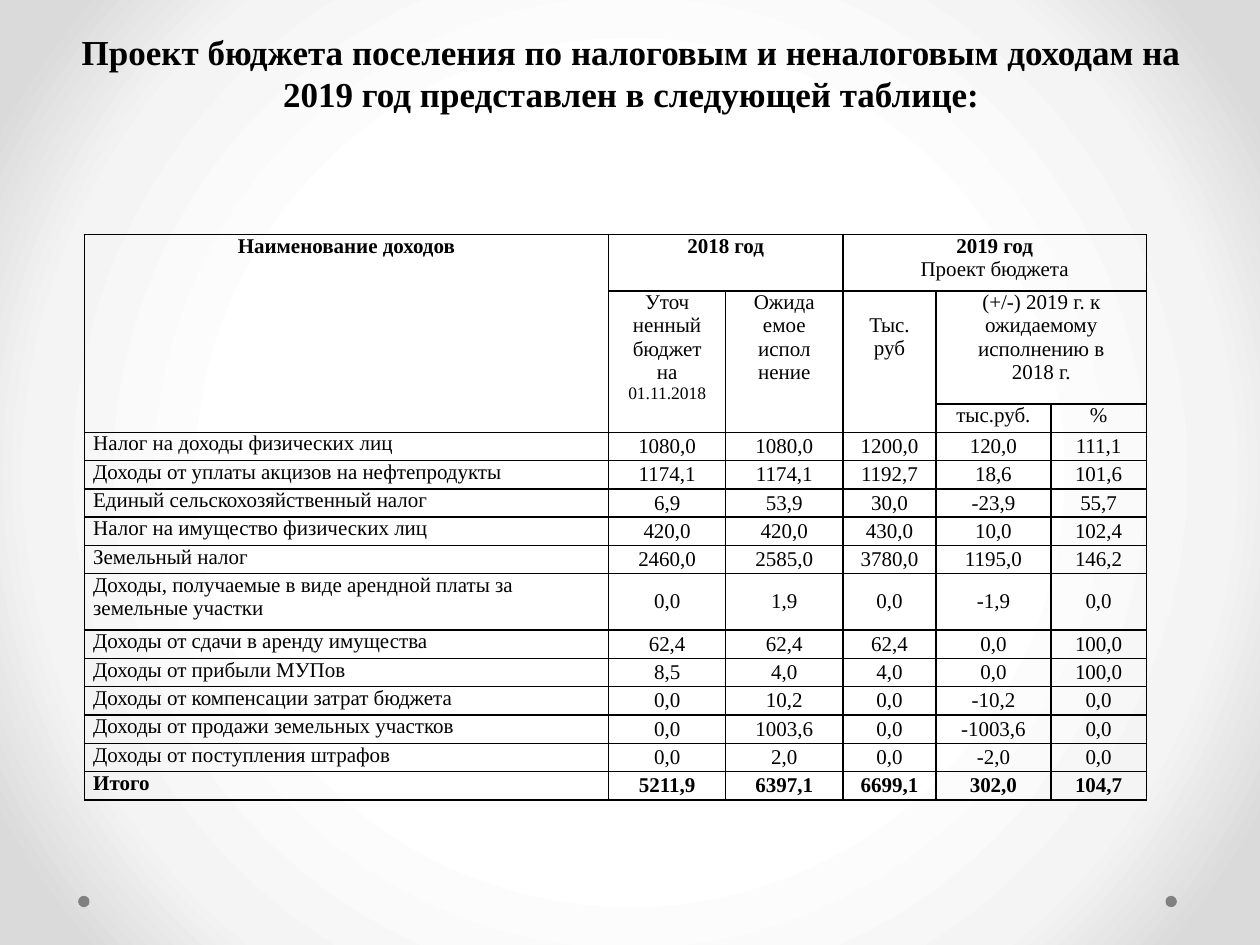
from dataclasses import dataclass
from pptx import Presentation
from pptx.dml.color import RGBColor
from pptx.enum.shapes import MSO_SHAPE as Shape
from pptx.enum.text import MSO_ANCHOR as Anchor, PP_ALIGN as Align
from pptx.oxml import parse_xml
from pptx.oxml.ns import nsdecls
from pptx.util import Inches, Pt


@dataclass(frozen=True)
class Theme:
    font: str = "Times New Roman"
    ink: str = "000000"
    dot: str = "808080"
    glow: tuple = ((50, "FFFFFF"), (76, "F4F4F4"), (92, "DADADA"))
    title_size: int = 20
    body_size: int = 12
    date_size: int = 10
    border: int = 1


THEME = Theme()
WIDTH, HEIGHT = Inches(10), Inches(7.5)
TITLE = "Проект бюджета поселения по налоговым и неналоговым доходам на 2019 год представлен в следующей таблице:"
BOLD = {"bold": True}
PLAIN = {"bold": False}
DATE = {"bold": False, "size": Pt(THEME.date_size)}

HEADER = [
    (0, 0, 2, 0, [("Наименование доходов", BOLD)]),
    (0, 1, 0, 2, [("2018 год", BOLD)]),
    (0, 3, 0, 5, [("2019 год", BOLD), ("Проект бюджета", PLAIN)]),
    (1, 1, 2, 1, [("Уточ", PLAIN), ("ненный бюджет", PLAIN), ("на", PLAIN), ("01.11.2018", DATE)]),
    (1, 2, 2, 2, [("Ожида", PLAIN), ("емое испол", PLAIN), ("нение", PLAIN)]),
    (1, 3, 2, 3, [("Тыс.", PLAIN), ("руб", PLAIN)]),
    (1, 4, 1, 5, [("(+/-) 2019 г. к ожидаемому", PLAIN), ("исполнению в", PLAIN), ("2018 г.", PLAIN)]),
    (2, 4, 2, 4, [("тыс.руб.", PLAIN)]),
    (2, 5, 2, 5, [("%", PLAIN)]),
]
INCOME = [
    ("Налог на доходы физических лиц", "1080,0 1080,0 1200,0 120,0 111,1"),
    ("Доходы от уплаты акцизов на нефтепродукты", "1174,1 1174,1 1192,7 18,6 101,6"),
    ("Единый сельскохозяйственный налог", "6,9 53,9 30,0 -23,9 55,7"),
    ("Налог на имущество физических лиц", "420,0 420,0 430,0 10,0 102,4"),
    ("Земельный налог", "2460,0 2585,0 3780,0 1195,0 146,2"),
    ("Доходы, получаемые в виде арендной платы за земельные участки", "0,0 1,9 0,0 -1,9 0,0"),
    ("Доходы от сдачи в аренду имущества", "62,4 62,4 62,4 0,0 100,0"),
    ("Доходы от прибыли МУПов", "8,5 4,0 4,0 0,0 100,0"),
    ("Доходы от компенсации затрат бюджета", "0,0 10,2 0,0 -10,2 0,0"),
    ("Доходы от продажи земельных участков", "0,0 1003,6 0,0 -1003,6 0,0"),
    ("Доходы от поступления штрафов", "0,0 2,0 0,0 -2,0 0,0"),
    ("Итого", "5211,9 6397,1 6699,1 302,0 104,7"),
]
COLUMN_SHARES = [4.16, 0.93, 0.93, 0.74, 0.91, 0.76]
ROW_UNITS = [2, 4, 1] + [2 if len(name) > 50 else 1 for name, _ in INCOME]


def apply(target, formats):
    for name, value in formats.items():
        setattr(target, name, value)


def write(frame, lines, align):
    for index, (words, formats) in enumerate(lines):
        paragraph = frame.paragraphs[0] if index == 0 else frame.add_paragraph()
        paragraph.alignment = align
        run = paragraph.add_run()
        run.text = words
        apply(run.font, {"name": THEME.font, "size": Pt(THEME.body_size), **formats})
        run.font.color.rgb = RGBColor.from_string(THEME.ink)


def paint_background(slide):
    stops = "".join(
        f'<a:gs pos="{share * 1000}"><a:srgbClr val="{color}"/></a:gs>' for share, color in THEME.glow
    )
    slide.element.cSld.insert(0, parse_xml(
        f'<p:bg {nsdecls("p", "a")}><p:bgPr><a:gradFill rotWithShape="1"><a:gsLst>{stops}</a:gsLst>'
        '<a:path path="circle"><a:fillToRect l="50000" t="50000" r="50000" b="50000"/></a:path>'
        '</a:gradFill><a:effectLst/></p:bgPr></p:bg>'
    ))


def place_dots(slide, left, top, width, size):
    for dot_left in (left + width - size, left):
        dot = slide.shapes.add_shape(Shape.OVAL, dot_left, top, size, size)
        dot.shadow.inherit = False
        dot.fill.solid()
        dot.fill.fore_color.rgb = RGBColor.from_string(THEME.dot)
        dot.line.fill.background()


def place_title(slide, left, top, width, height):
    title = slide.shapes.title
    apply(title, {"left": left, "top": top, "width": width, "height": height})
    apply(title.text_frame, {"vertical_anchor": Anchor.BOTTOM, "word_wrap": True})
    write(title.text_frame, [(TITLE, {"size": Pt(THEME.title_size), "bold": True})], Align.CENTER)


def frame_cell(cell):
    apply(cell, {"margin_left": Inches(0.07), "margin_right": Inches(0.07),
                 "margin_top": 0, "margin_bottom": 0})
    properties = cell._tc.get_or_add_tcPr()
    for side in ("lnL", "lnR", "lnT", "lnB"):
        properties.append(parse_xml(
            f'<a:{side} {nsdecls("a")} w="{Pt(THEME.border)}"><a:solidFill>'
            f'<a:srgbClr val="{THEME.ink}"/></a:solidFill></a:{side}>'
        ))
    cell.fill.background()


def place_income_table(slide, left, top, width, height):
    table = slide.shapes.add_table(
        len(ROW_UNITS), len(COLUMN_SHARES), left, top, width, height
    ).table
    apply(table, {"first_row": False, "horz_banding": False})
    for column, share in zip(table.columns, COLUMN_SHARES):
        column.width = int(width * share / sum(COLUMN_SHARES))
    for row, units in zip(table.rows, ROW_UNITS):
        row.height = int(height * units / sum(ROW_UNITS))
    for cell in table.iter_cells():
        frame_cell(cell)
    for row, column, last_row, last_column, lines in HEADER:
        cell = table.cell(row, column)
        if (row, column) != (last_row, last_column):
            cell.merge(table.cell(last_row, last_column))
        write(cell.text_frame, lines, Align.CENTER)
    table.cell(1, 3).margin_top = Inches(0.18)
    for row, (name, amounts) in enumerate(INCOME, start=3):
        formats = BOLD if name == "Итого" else PLAIN
        write(table.cell(row, 0).text_frame, [(name, formats)], Align.LEFT)
        for column, amount in enumerate(amounts.split(), start=1):
            cell = table.cell(row, column)
            cell.vertical_anchor = Anchor.MIDDLE
            write(cell.text_frame, [(amount, formats)], Align.CENTER)


def main():
    deck = Presentation()
    apply(deck, {"slide_width": WIDTH, "slide_height": HEIGHT})
    slide = deck.slides.add_slide(deck.slide_layouts[5])
    paint_background(slide)
    place_dots(slide, Inches(0.62), Inches(7.11), Inches(8.72), Inches(0.09))
    place_title(slide, Inches(0.51), Inches(0.36), Inches(9), Inches(0.6))
    place_income_table(slide, Inches(0.67), Inches(1.86), Inches(8.43), Inches(4.49))
    deck.save("out.pptx")


if __name__ == "__main__":
    main()
